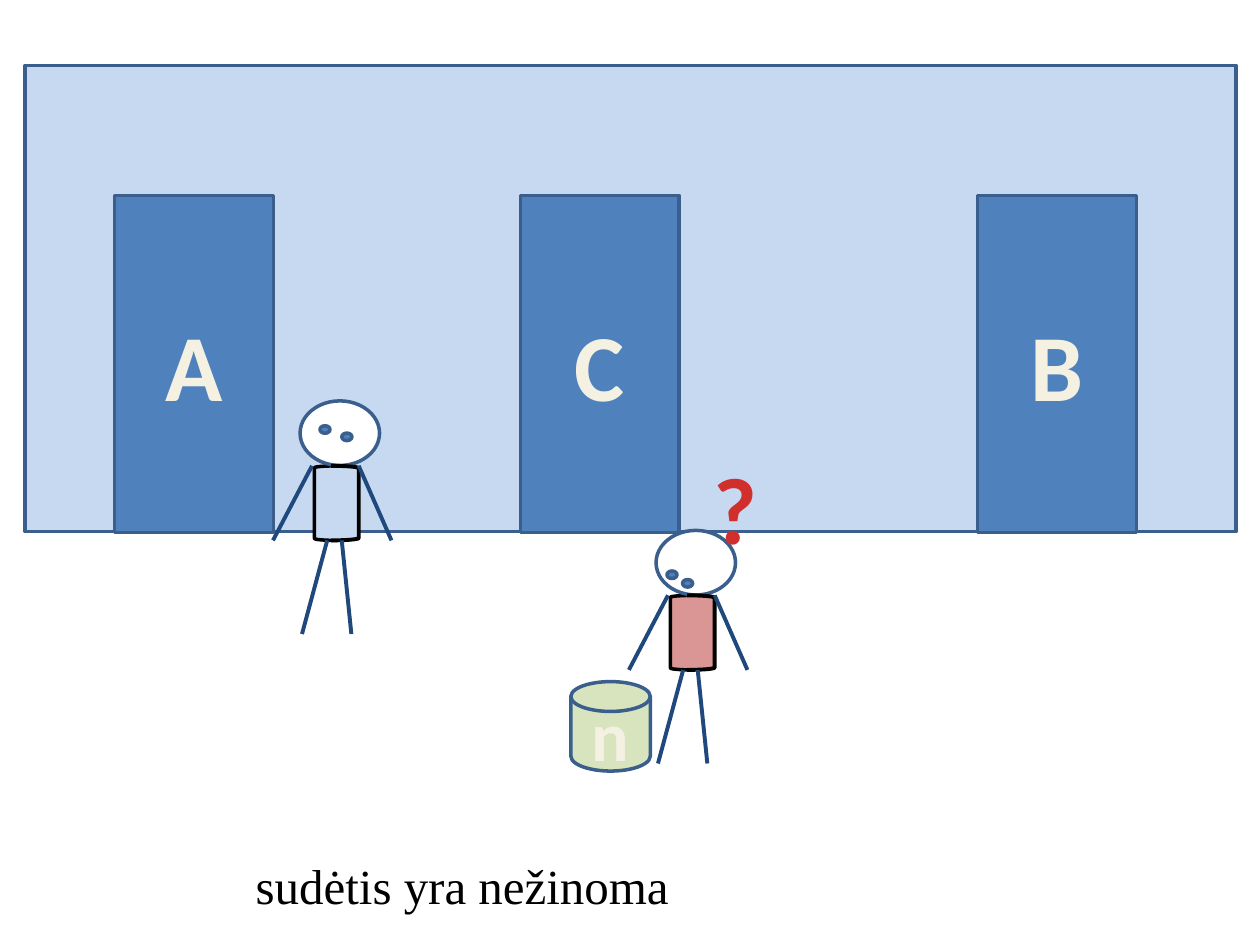
"""Draw three doors, two stick figures and a jar of unknown contents."""
from lxml import etree
from pptx import Presentation
from pptx.dml.color import RGBColor
from pptx.enum.shapes import MSO_CONNECTOR, MSO_SHAPE
from pptx.enum.text import MSO_ANCHOR, MSO_AUTO_SIZE, PP_ALIGN
from pptx.oxml.ns import qn
from pptx.util import Pt

RECTANGLE, OVAL = MSO_SHAPE.RECTANGLE, MSO_SHAPE.OVAL
JAR = MSO_SHAPE.FLOWCHART_MAGNETIC_DISK
LEFT_BRACKET, RIGHT_BRACKET = MSO_SHAPE.LEFT_BRACKET, MSO_SHAPE.RIGHT_BRACKET
STRAIGHT = MSO_CONNECTOR.STRAIGHT
MIDDLE, NO_RESIZE, GROW = MSO_ANCHOR.MIDDLE, MSO_AUTO_SIZE.NONE, MSO_AUTO_SIZE.SHAPE_TO_FIT_TEXT
LEFT, CENTER = PP_ALIGN.LEFT, PP_ALIGN.CENTER

PALE_BLUE, BLUE, OUTLINE, LIMB = "C6D9F1", "4F81BD", "3A5F8C", "1F497D"
WHITE, BLACK, CREAM, RED = "FFFFFF", "000000", "F4F1E3", "D02F2C"
GREEN, PINK = "D7E4BD", "D99694"

WALL = (14.4, 37.4, 692, 266.4)
DOOR_TOP, DOOR_WIDTH, DOOR_HEIGHT = 111.6, 90.7, 192.6
DOORS = {"A": 65.5, "B": 558.7, "C": 297.4}
HEAD_SIZE, EYE_SIZE = (45.4, 36.9), (5.8, 4.3)
SHOULDER, HIP, FOOT = 37.1, 79.7, 133.2
LIMBS = [
    ((23.8, HIP), (29.3, FOOT)),
    ((33.5, SHOULDER), (52.2, HIP)),
    ((15.5, HIP), (1.1, FOOT)),
    ((6.8, SHOULDER), (-15.5, HIP)),
]


def color(value):
    """Turn a hex string into a colour."""
    return RGBColor.from_string(value)


class Painter:
    """Hold the style and the current slide."""

    def __init__(self, page, font="Calibri", line_width=2):
        """Keep the slide, font and usual line width."""
        self.page = page
        self.font = font
        self.line_width = line_width

    def shape(self, kind, left, top, width, height, fill, line=OUTLINE,
              line_width=None, parent=None):
        """Add a filled and outlined preset shape."""
        shapes = (parent or self.page).shapes
        shape = shapes.add_shape(kind, Pt(left), Pt(top), Pt(width), Pt(height))
        shape.shadow.inherit = False
        shape.fill.solid()
        shape.fill.fore_color.rgb = color(fill)
        shape.line.color.rgb = color(line)
        shape.line.width = Pt(line_width or self.line_width)
        return shape

    def set_text(self, shape, text, size, ink, bold=True, font=None, align=CENTER):
        """Set and format one line of text in a shape."""
        shape.text_frame.text = text
        para = shape.text_frame.paragraphs[0]
        para.alignment = align
        for span in para.runs:
            span.font.name = font or self.font
            span.font.size = Pt(size)
            span.font.bold = bold
            span.font.color.rgb = color(ink)

    def label(self, shape, text, size):
        """Centre a cream label in a shape."""
        shape.text_frame.vertical_anchor = MIDDLE
        self.set_text(shape, text, size, CREAM)

    def text(self, left, top, width, height, text, size, ink, wrap=True, **style):
        """Add a text box."""
        box = self.page.shapes.add_textbox(Pt(left), Pt(top), Pt(width), Pt(height))
        box.text_frame.word_wrap = wrap
        box.text_frame.auto_size = GROW if wrap else NO_RESIZE
        self.set_text(box, text, size, ink, **style)

    def limb(self, start, end, parent):
        """Add a straight arm or leg."""
        points = [Pt(value) for value in (*start, *end)]
        line = parent.shapes.add_connector(STRAIGHT, *points)
        line.line.color.rgb = color(LIMB)
        line.line.width = Pt(2.25)
        etree.SubElement(line._element.spPr, qn("a:effectLst"))

    def figure(self, left, top, body_fill, eyes):
        """Add a grouped stick figure placed by the corner of its head."""
        group = self.page.shapes.add_group_shape()
        body_top, body_height = top + SHOULDER, HIP - SHOULDER
        self.shape(LEFT_BRACKET, left + 8.2, body_top, 13, body_height,
                   body_fill, BLACK, parent=group)
        self.shape(OVAL, left, top, *HEAD_SIZE, WHITE, parent=group)
        for across, down in eyes:
            self.shape(OVAL, left + across, top + down, *EYE_SIZE, BLUE, parent=group)
        self.shape(RIGHT_BRACKET, left + 17.7, body_top, 15.8, body_height,
                   body_fill, BLACK, 2.25, group)
        for (x1, y1), (x2, y2) in LIMBS:
            self.limb((left + x1, top + y1), (left + x2, top + y2), group)


def main():
    """Build and save the slide."""
    deck = Presentation()
    deck.slide_width, deck.slide_height = Pt(720), Pt(540)
    painter = Painter(deck.slides.add_slide(deck.slide_layouts[6]))

    painter.shape(RECTANGLE, *WALL, PALE_BLUE)
    for name, left in DOORS.items():
        door = painter.shape(RECTANGLE, left, DOOR_TOP, DOOR_WIDTH, DOOR_HEIGHT, BLUE)
        painter.label(door, name, 54)
    jar = painter.shape(JAR, 326.2, 389.5, 45.4, 51.1, GREEN)
    painter.label(jar, "n", 40)

    painter.figure(171.5, 229.1, PALE_BLUE, [(11.3, 14.2), (23.8, 18.4)])
    painter.figure(374.9, 303.1, PINK, [(6.2, 23.2), (15.1, 28.1)])

    painter.text(400.3, 253.4, 39.6, 72.7, "?", 54, RED, wrap=False)
    painter.text(139, 485.3, 560.9, 41, "sudėtis yra nežinoma", 28, BLACK,
                 bold=False, font="Times New Roman", align=LEFT)
    deck.save("out.pptx")


if __name__ == "__main__":
    main()
